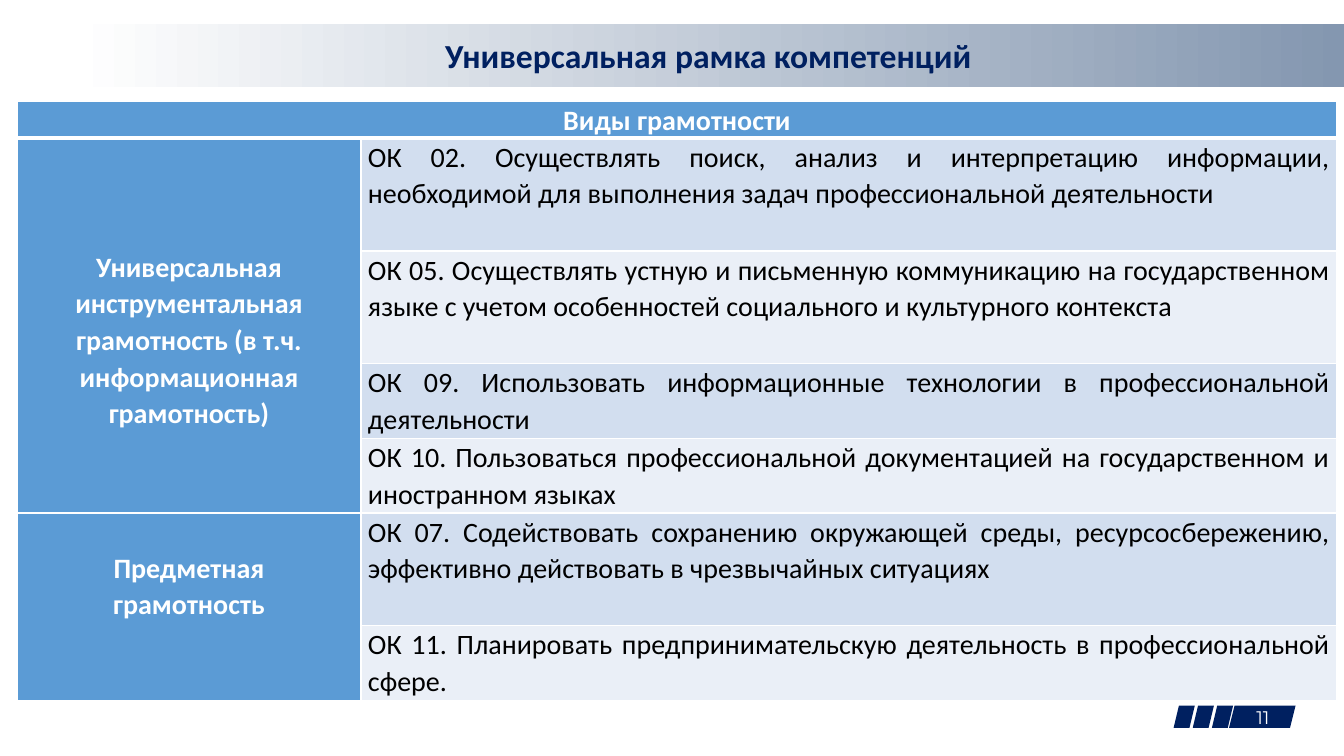
from dataclasses import dataclass

from lxml import etree
from pptx import Presentation
from pptx.dml.color import RGBColor
from pptx.enum.shapes import MSO_SHAPE
from pptx.enum.text import MSO_ANCHOR, MSO_AUTO_SIZE, PP_ALIGN
from pptx.oxml.ns import qn
from pptx.slide import Slide
from pptx.table import _Cell
from pptx.text.text import TextFrame
from pptx.util import Inches, Pt

PARALLELOGRAM = MSO_SHAPE.PARALLELOGRAM
MIDDLE = MSO_ANCHOR.MIDDLE
TOP = MSO_ANCHOR.TOP
NO_AUTOFIT = MSO_AUTO_SIZE.NONE
CENTER = PP_ALIGN.CENTER
JUSTIFY = PP_ALIGN.JUSTIFY

NAVY = RGBColor(0x00, 0x20, 0x60)
STEEL = RGBColor(0x84, 0x97, 0xB0)
BLUE = RGBColor(0x5B, 0x9B, 0xD5)
BAND_DARK = RGBColor(0xD2, 0xDE, 0xEF)
BAND_LIGHT = RGBColor(0xEA, 0xEF, 0xF7)
WHITE = RGBColor(0xFF, 0xFF, 0xFF)
BLACK = RGBColor(0x00, 0x00, 0x00)

TITLE_ONLY_LAYOUT = 5
COLUMN_WIDTHS = (3.41, 9.68)
HEADER_HEIGHT = 0.36


@dataclass(frozen=True)
class Competence:
    text: str
    height: float


@dataclass(frozen=True)
class Literacy:
    lines: tuple[str, ...]
    top_margin: float
    competences: tuple[Competence, ...]


LITERACIES = (
    Literacy(
        ("Универсальная", "инструментальная",
         "грамотность (в т.ч. информационная грамотность)"),
        1.09,
        (
            Competence("ОК 02. Осуществлять поиск, анализ и интерпретацию информации, "
                       "необходимой для выполнения задач профессиональной деятельности", 1.12),
            Competence("ОК 05. Осуществлять устную и письменную коммуникацию на "
                       "государственном языке с учетом особенностей социального и "
                       "культурного контекста", 1.12),
            Competence("ОК 09. Использовать информационные технологии в "
                       "профессиональной деятельности", 0.74),
            Competence("ОК 10. Пользоваться профессиональной документацией на "
                       "государственном и иностранном языках", 0.74),
        ),
    ),
    Literacy(
        ("Предметная", "грамотность"),
        0.36,
        (
            Competence("ОК 07. Содействовать сохранению окружающей среды, "
                       "ресурсосбережению, эффективно действовать в чрезвычайных "
                       "ситуациях", 1.12),
            Competence("ОК 11. Планировать предпринимательскую деятельность в "
                       "профессиональной сфере.", 0.74),
        ),
    ),
)


def write_text(frame: TextFrame, *lines: str, size: float = 20, color: RGBColor = BLACK,
               bold: bool = False, font: str = "Calibri", align: PP_ALIGN = CENTER,
               spacing: float = 1.0) -> None:
    frame.word_wrap = True
    for index, line in enumerate(lines):
        para = frame.add_paragraph() if index else frame.paragraphs[0]
        para.alignment = align
        para.line_spacing = spacing
        para.space_before = Pt(0)
        span = para.add_run()
        span.text = line
        span.font.name = font
        span.font.size = Pt(size)
        span.font.bold = bold
        span.font.color.rgb = color


def add_borders(cell: _Cell, top: float = 1, bottom: float = 1) -> None:
    properties = cell._tc.get_or_add_tcPr()
    widths = {"a:lnL": 1, "a:lnR": 1, "a:lnT": top, "a:lnB": bottom}
    for tag, width in widths.items():
        line = etree.SubElement(properties, qn(tag), w=str(Pt(width)))
        fill = etree.SubElement(line, qn("a:solidFill"))
        etree.SubElement(fill, qn("a:srgbClr"), val=str(WHITE))


def format_cell(cell: _Cell, fill: RGBColor, top_margin: float = 0) -> None:
    cell.margin_left = cell.margin_right = Inches(0.07)
    cell.margin_top = Inches(top_margin)
    cell.margin_bottom = 0
    cell.vertical_anchor = TOP
    cell.fill.solid()
    cell.fill.fore_color.rgb = fill


def add_title(page: Slide) -> None:
    title = page.shapes.title
    title.left, title.top = Inches(0.72), Inches(0.24)
    title.width, title.height = Inches(12.61), Inches(0.62)
    title.fill.gradient()
    title.fill.gradient_angle = 180
    for stop, color, position in zip(title.fill.gradient_stops, (STEEL, WHITE), (0, 1)):
        stop.color.rgb = color
        stop.position = position
    frame = title.text_frame
    frame.auto_size = NO_AUTOFIT
    frame.vertical_anchor = MIDDLE
    write_text(frame, "Универсальная рамка компетенций", size=24, color=NAVY, bold=True)


def add_slash(page: Slide, left: float, width: float) -> None:
    slash = page.shapes.add_shape(PARALLELOGRAM, Inches(left), Inches(7),
                                  Inches(width), Inches(0.22))
    slash.shadow.inherit = False
    slash.fill.solid()
    slash.fill.fore_color.rgb = NAVY
    slash.line.fill.background()


def add_page_number(page: Slide) -> None:
    for index in range(3):
        add_slash(page, 11.64 + 0.19 * index, 0.21)
    add_slash(page, 12.19, 0.66)
    box = page.shapes.add_textbox(Inches(12.27), Inches(6.97), Inches(0.51), Inches(0.29))
    frame = box.text_frame
    frame.margin_left = frame.margin_right = Inches(0.07)
    frame.margin_top = frame.margin_bottom = Inches(0.04)
    write_text(frame, "11", size=13, color=WHITE, font="Montserrat")


def add_literacy_table(page: Slide) -> None:
    heights = [HEADER_HEIGHT] + [competence.height for literacy in LITERACIES
                                 for competence in literacy.competences]
    table = page.shapes.add_table(
        len(heights), len(COLUMN_WIDTHS), Inches(0.17), Inches(1.01),
        Inches(sum(COLUMN_WIDTHS)), Inches(sum(heights))).table
    table.horz_banding = False
    for column, width in zip(table.columns, COLUMN_WIDTHS):
        column.width = Inches(width)
    for index, (row, height) in enumerate(zip(table.rows, heights)):
        row.height = Inches(height)
        for cell in row.cells:
            add_borders(cell, top=3 if index == 1 else 1, bottom=1 if index else 3)

    header = table.cell(0, 0)
    header.merge(table.cell(0, 1))
    format_cell(header, BLUE)
    write_text(header.text_frame, "Виды грамотности", color=WHITE, bold=True, spacing=1.07)

    first = 1
    for literacy in LITERACIES:
        last = first + len(literacy.competences) - 1
        label = table.cell(first, 0)
        label.merge(table.cell(last, 0))
        format_cell(label, BLUE, literacy.top_margin)
        write_text(label.text_frame, *literacy.lines, color=WHITE, bold=True, spacing=1.07)
        for index, competence in enumerate(literacy.competences, first):
            cell = table.cell(index, 1)
            format_cell(cell, BAND_DARK if index % 2 else BAND_LIGHT)
            write_text(cell.text_frame, competence.text, align=JUSTIFY, spacing=1.07)
        first = last + 1


def main() -> None:
    deck = Presentation()
    deck.slide_width, deck.slide_height = Inches(13.33), Inches(7.5)
    page = deck.slides.add_slide(deck.slide_layouts[TITLE_ONLY_LAYOUT])
    add_title(page)
    add_page_number(page)
    add_literacy_table(page)
    deck.save("out.pptx")


if __name__ == "__main__":
    main()
